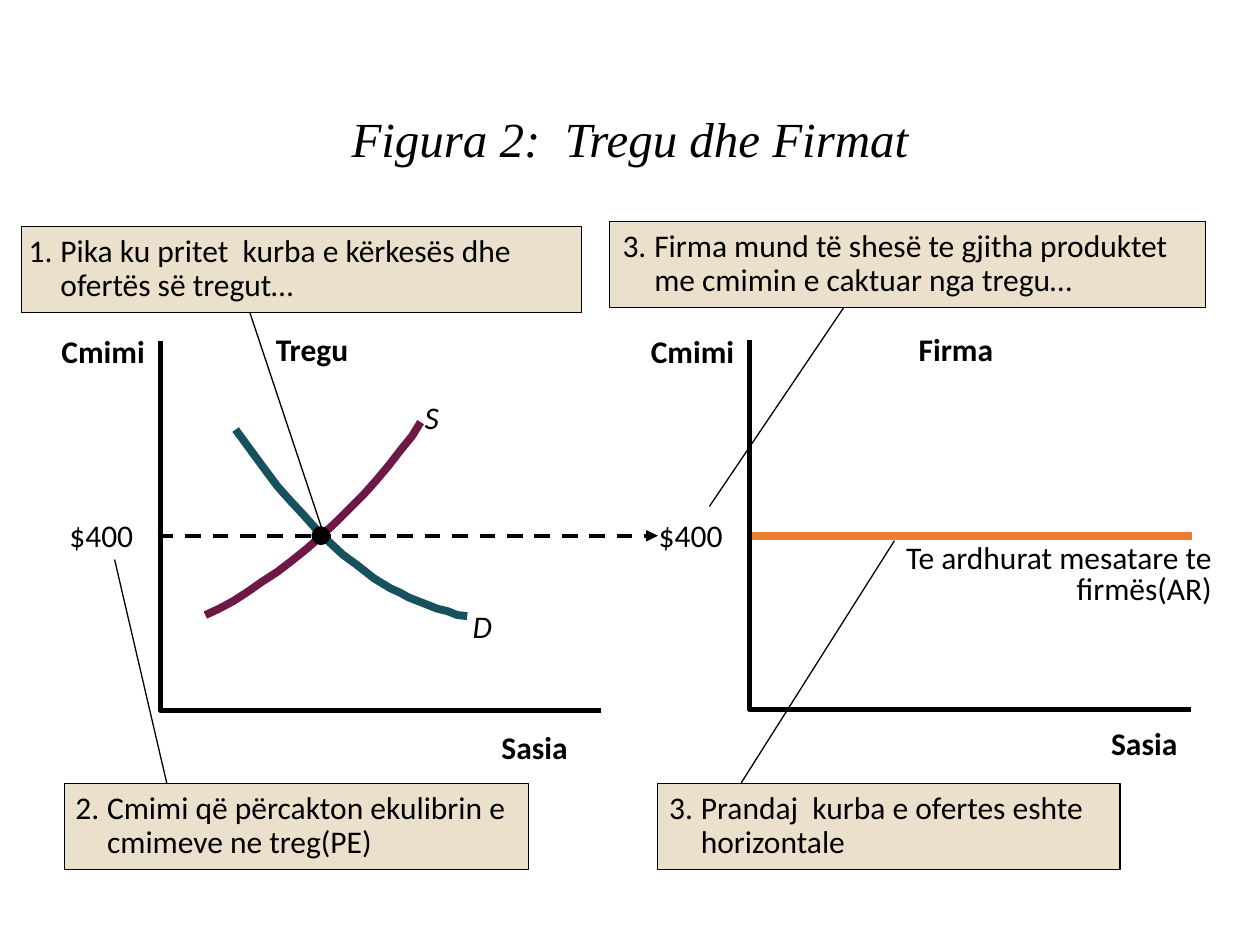
from lxml import etree
from pptx import Presentation
from pptx import util as u
from pptx.dml.color import RGBColor
from pptx.enum import dml, shapes, text
from pptx.oxml.ns import qn

BLACK, SAND, TEAL, PLUM, ORANGE = "000000", "EBE0CC", "17515E", "6D1845", "ED7D31"
LEFT, CENTER, RIGHT = text.PP_ALIGN.LEFT, text.PP_ALIGN.CENTER, text.PP_ALIGN.RIGHT
PRICE_Y = 10.8
HANGING = u.Cm(0.64)

DEMAND = [(4.75, 8.66), (5.16, 9.22), (5.59, 9.8), (5.84, 10.08), (6.1, 10.36),
          (6.35, 10.64), (6.63, 10.92), (6.91, 11.18), (7.21, 11.4), (7.54, 11.66),
          (7.87, 11.86), (8.05, 11.94), (8.23, 12.04), (8.43, 12.12), (8.61, 12.19),
          (8.81, 12.27), (9.02, 12.32), (9.22, 12.4), (9.42, 12.42)]
SUPPLY = [(4.14, 12.4), (4.42, 12.27), (4.7, 12.12), (4.98, 11.94), (5.28, 11.73),
          (5.59, 11.53), (5.89, 11.3), (6.2, 11.05), (6.48, 10.8), (6.78, 10.52),
          (7.06, 10.24), (7.34, 9.96), (7.59, 9.68), (7.85, 9.37), (8.08, 9.07),
          (8.31, 8.79), (8.48, 8.51)]


def color(value):
    return RGBColor.from_string(value)


class Figure:
    """Holds the text style and the page being drawn; lengths are centimetres."""

    font, size = "Calibri", 18

    def __init__(self, page):
        self.page = page

    def label(self, words, x, y, width, height=0.76, align=LEFT, spacing=None,
              wrap=False, hanging=False, bold=None, italic=None, font=None, size=None):
        box = self.page.shapes.add_textbox(u.Cm(x), u.Cm(y), u.Cm(width), u.Cm(height))
        frame = box.text_frame
        frame.margin_left = frame.margin_right = frame.margin_top = frame.margin_bottom = 0
        frame.word_wrap = wrap
        para = frame.paragraphs[0]
        para.alignment = align
        if spacing:
            para.line_spacing = spacing
        if hanging:
            properties = para._p.get_or_add_pPr()
            properties.set("marL", str(HANGING))
            properties.set("indent", str(-HANGING))
        span = para.add_run()
        span.text = words
        span.font.name = font or self.font
        span.font.size = u.Pt(size or self.size)
        span.font.bold, span.font.italic = bold, italic
        span.font.color.rgb = color(BLACK)
        return box

    def shape(self, kind, x, y, width, height, fill, line=None):
        item = self.page.shapes.add_shape(kind, u.Cm(x), u.Cm(y), u.Cm(width), u.Cm(height))
        item.shadow.inherit = False
        item.fill.solid()
        item.fill.fore_color.rgb = color(fill)
        if line:
            self.stroke(item.line, line, 0.75)
        else:
            item.line.fill.background()

    def stroke(self, line, value, width):
        line.color.rgb = color(value)
        line.width = u.Pt(width)

    def polyline(self, points, value, width):
        start, *rest = [(u.Cm(x), u.Cm(y)) for x, y in points]
        builder = self.page.shapes.build_freeform(*start)
        builder.add_line_segments(rest, close=False)
        item = builder.convert_to_shape()
        item.shadow.inherit = False
        item.fill.background()
        self.stroke(item.line, value, width)

    def line(self, start, end, value=BLACK, width=0.75, dashed=False, arrow=False):
        item = self.page.shapes.add_connector(
            shapes.MSO_CONNECTOR.STRAIGHT, *map(u.Cm, (*start, *end)))
        self.stroke(item.line, value, width)
        if dashed:
            item.line.dash_style = dml.MSO_LINE.DASH
        properties = item.element.spPr
        if arrow:
            outline = properties.find(qn("a:ln"))
            etree.SubElement(outline, qn("a:tailEnd"), type="triangle")
        etree.SubElement(properties, qn("a:effectLst"))

    def axes(self, x, y, quantity_x, quantity_y):
        """Draws one pair of axes from its top left corner, with both axis names."""
        bottom = y + 7.44
        self.polyline([(x, y), (x, bottom), (x + 8.89, bottom)], BLACK, 3)
        self.label("Sasia", quantity_x, quantity_y, 1.68, bold=True)
        self.label("Cmimi", x - 3.23, 6.78, 2.92, 0.69, RIGHT, 0.9, wrap=True, bold=True)

    def callout(self, words, x, y, width, inset, text_width):
        self.shape(shapes.MSO_SHAPE.RECTANGLE, x, y, width, 1.73, SAND, BLACK)
        self.label(words, x + inset, y + 0.18, text_width, 1.4, spacing=0.9,
                   wrap=True, hanging=True)


def main():
    deck = Presentation()
    deck.slide_width, deck.slide_height = u.Cm(25.4), u.Cm(19.05)
    figure = Figure(deck.slides.add_slide(deck.slide_layouts[6]))

    title = figure.label("Figura 2:  Tregu dhe Firmat", 1.75, 1.02, 21.9, 3.68, CENTER,
                         0.9, wrap=True, italic=True, font="Times New Roman", size=28)
    title.text_frame.vertical_anchor = text.MSO_ANCHOR.MIDDLE

    figure.axes(3.23, 6.88, 10.11, 14.68)
    figure.polyline(DEMAND, TEAL, 4.5)
    figure.polyline(SUPPLY, PLUM, 4.5)
    figure.label("D", 9.53, 12.24, 0.46, italic=True)
    figure.label("S", 8.56, 8.03, 0.43, italic=True)
    figure.shape(shapes.MSO_SHAPE.OVAL, 6.28, PRICE_Y - 0.19, 0.38, 0.38, BLACK)
    figure.line((15.14, PRICE_Y), (24.03, PRICE_Y), ORANGE, 4.5)
    figure.label("Te ardhurat mesatare te firmës(AR)", 17.65, 11, 6.78, 1.22, RIGHT,
                 0.8, wrap=True)
    for name, name_x, price_x in (("Tregu", 5.56, 1.4), ("Firma", 18.52, 13.28)):
        figure.label(name, name_x, 6.65, 1.75, bold=True)
        figure.label("$400", price_x, 10.41, 1.42)

    for start, end in (((2.31, 11.28), (3.43, 16.08)), ((4.8, 5.59), (6.5, 10.69)),
                       ((17.63, 5.28), (14.3, 10.21)), ((14.88, 15.88), (18.03, 10.9))):
        figure.line(start, end)

    figure.axes(15.11, 6.86, 22.4, 14.6)
    figure.line((3.18, PRICE_Y), (6.55, PRICE_Y), width=2.25, dashed=True)
    figure.line((6.35, PRICE_Y), (13.26, PRICE_Y), width=2.25, dashed=True, arrow=True)

    figure.callout("1.\tPika ku pritet  kurba e kërkesës dhe ofertës së tregut…",
                   0.43, 4.57, 11.3, 0.15, 11.02)
    figure.callout("2.\tCmimi që përcakton ekulibrin e cmimeve ne treg(PE)",
                   1.3, 15.8, 9.35, 0.22, 8.89)
    figure.callout("3.\tPrandaj  kurba e ofertes eshte horizontale",
                   13.26, 15.8, 9.32, 0.23, 9.07)
    figure.callout("3.\tFirma mund të shesë te gjitha produktet me cmimin e caktuar nga tregu…",
                   12.29, 4.47, 12.01, 0.26, 11.48)

    deck.save("out.pptx")


if __name__ == "__main__":
    main()
